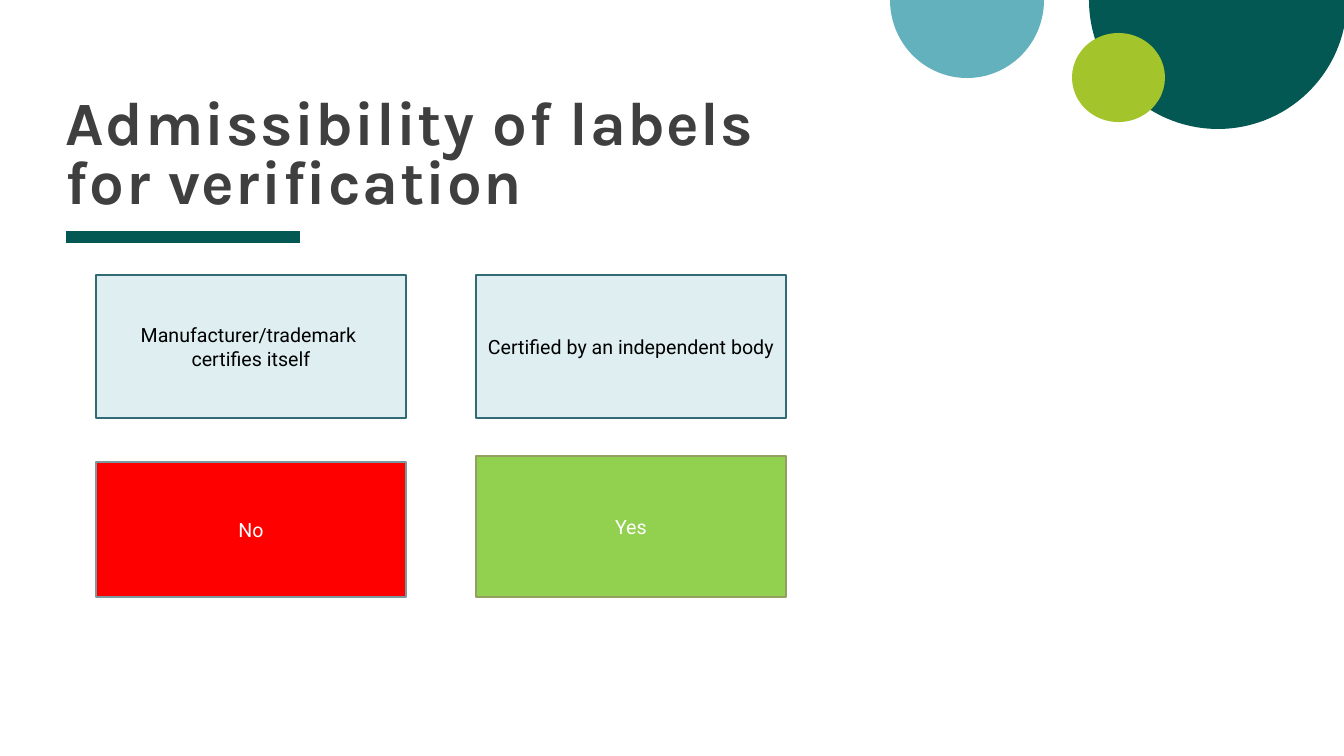
from dataclasses import dataclass

from lxml.etree import SubElement
from pptx import Presentation
from pptx.dml.color import RGBColor
from pptx.enum.shapes import MSO_CONNECTOR, MSO_SHAPE
from pptx.enum.text import MSO_ANCHOR, MSO_AUTO_SIZE, PP_ALIGN
from pptx.oxml.ns import qn
from pptx.slide import Slide
from pptx.util import Emu, Pt

EMU_PER_PX = 914400 / 100.8


@dataclass(frozen=True)
class Theme:
    heading_font: str = "Karla"
    body_font: str = "Roboto"
    title_size: int = 44
    card_size: int = 14
    title_ink: str = "3F3F3F"
    dark_ink: str = "000000"
    light_ink: str = "FFFFFF"
    teal: str = "035854"
    sky: str = "64B1BE"
    lime: str = "A3C42A"
    pale: str = "CAE4E9"
    pale_edge: str = "316C76"
    red: str = "FF0000"
    red_edge: str = "7B9A9F"
    green: str = "92D050"
    green_edge: str = "949F60"


THEME = Theme()


@dataclass(frozen=True)
class Box:
    left: int
    top: int
    width: int
    height: int

    def emu(self) -> tuple[Emu, Emu, Emu, Emu]:
        return px(self.left), px(self.top), px(self.width), px(self.height)


@dataclass(frozen=True)
class Circle:
    box: Box
    fill: str
    lower_half: bool = False


@dataclass(frozen=True)
class Card:
    text: str
    box: Box
    fill: str
    edge: str
    ink: str
    opacity: int = 100


CARD_WIDTH = 310
SELF_LEFT, INDEPENDENT_LEFT = 96, 476
SOURCE_TOP, SOURCE_HEIGHT = 275, 143
VERDICT_BOTTOM = 597

CIRCLES = [
    Circle(Box(1089, -129, 258, 258), THEME.teal, lower_half=True),
    Circle(Box(890, -78, 154, 156), THEME.sky, lower_half=True),
    Circle(Box(1072, 33, 93, 89), THEME.lime),
]


def source_card(text: str, left: int) -> Card:
    return Card(text, Box(left, SOURCE_TOP, CARD_WIDTH, SOURCE_HEIGHT),
                THEME.pale, THEME.pale_edge, THEME.dark_ink, opacity=62)


def verdict_card(text: str, left: int, height: int, fill: str, edge: str) -> Card:
    return Card(text, Box(left, VERDICT_BOTTOM - height, CARD_WIDTH, height),
                fill, edge, THEME.light_ink)


CARDS = [
    source_card("Manufacturer/trademark \vcertifies itself", SELF_LEFT),
    source_card("Certified by an independent body", INDEPENDENT_LEFT),
    verdict_card("No", SELF_LEFT, 135, THEME.red, THEME.red_edge),
    verdict_card("Yes", INDEPENDENT_LEFT, 141, THEME.green, THEME.green_edge),
]


def px(length: int) -> Emu:
    return Emu(round(length * EMU_PER_PX))


def rgb(colour: str) -> RGBColor:
    return RGBColor.from_string(colour)


def add_circle(slide: Slide, circle: Circle) -> None:
    preset = MSO_SHAPE.PIE if circle.lower_half else MSO_SHAPE.OVAL
    disc = slide.shapes.add_shape(preset, *circle.box.emu())
    if circle.lower_half:
        disc.adjustments[0] = 0
        disc.adjustments[1] = 108  # 180 degrees
    disc.shadow.inherit = False
    disc.fill.solid()
    disc.fill.fore_color.rgb = rgb(circle.fill)
    disc.line.fill.background()


def add_title_rule(slide: Slide) -> None:
    rule = slide.shapes.add_connector(
        MSO_CONNECTOR.STRAIGHT, px(66), px(237), px(300), px(237))
    rule.line.color.rgb = rgb(THEME.teal)
    rule.line.width = Pt(8)
    SubElement(rule.line._get_or_add_ln().getparent(), qn("a:effectLst"))


def set_title(slide: Slide, text: str) -> None:
    title = slide.shapes.title
    title.left, title.top, title.width, title.height = Box(66, 41, 763, 175).emu()
    frame = title.text_frame
    frame.text = text
    frame.word_wrap = True
    frame.auto_size = MSO_AUTO_SIZE.NONE
    frame.vertical_anchor = MSO_ANCHOR.BOTTOM
    frame.margin_left = frame.margin_top = frame.margin_right = frame.margin_bottom = 0
    paragraph = frame.paragraphs[0]
    paragraph.alignment = PP_ALIGN.LEFT
    paragraph.line_spacing = 0.8
    run = paragraph.runs[0]
    run.font.name = THEME.heading_font
    run.font.size = Pt(THEME.title_size)
    run.font.bold = True
    run.font.color.rgb = rgb(THEME.title_ink)
    run.font._element.set("spc", "100")


def add_card(slide: Slide, card: Card) -> None:
    panel = slide.shapes.add_shape(MSO_SHAPE.RECTANGLE, *card.box.emu())
    panel.shadow.inherit = False
    panel.fill.solid()
    panel.fill.fore_color.rgb = rgb(card.fill)
    if card.opacity < 100:
        colour = panel._element.spPr.find(qn("a:solidFill")).find(qn("a:srgbClr"))
        SubElement(colour, qn("a:alpha")).set("val", str(card.opacity * 1000))
    panel.line.color.rgb = rgb(card.edge)
    panel.line.width = Pt(2)
    frame = panel.text_frame
    frame.text = card.text
    frame.word_wrap = True
    frame.vertical_anchor = MSO_ANCHOR.MIDDLE
    paragraph = frame.paragraphs[0]
    paragraph.alignment = PP_ALIGN.CENTER
    for run in paragraph.runs:
        run.font.name = THEME.body_font
        run.font.size = Pt(THEME.card_size)
        run.font.color.rgb = rgb(card.ink)


def main() -> None:
    deck = Presentation()
    deck.slide_width, deck.slide_height = px(1344), px(756)
    slide = deck.slides.add_slide(deck.slide_layouts[5])
    set_title(slide, "Admissibility of labels for verification")
    add_title_rule(slide)
    for circle in CIRCLES:
        add_circle(slide, circle)
    for card in CARDS:
        add_card(slide, card)
    deck.save("out.pptx")


if __name__ == "__main__":
    main()
